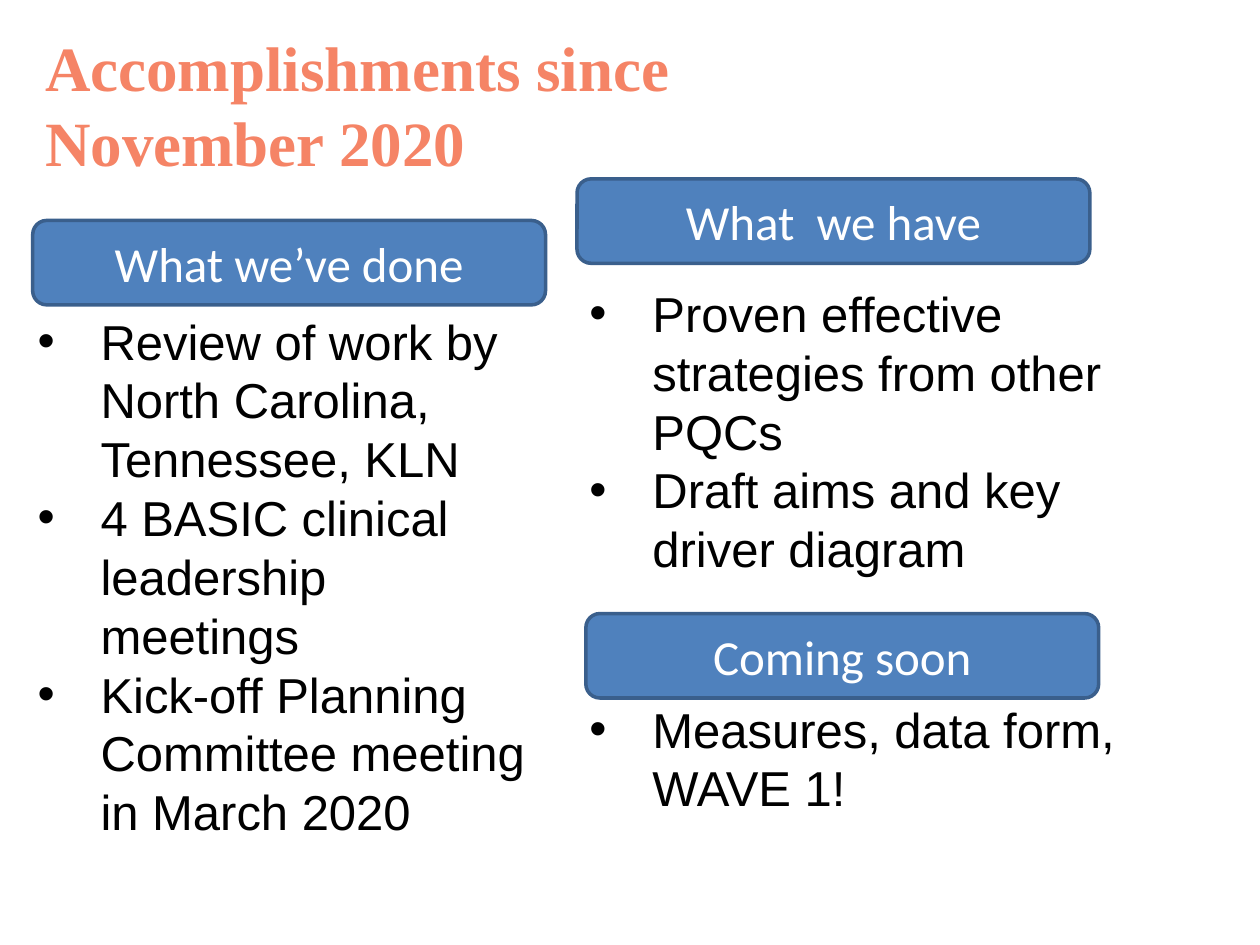
from lxml.etree import SubElement
from pptx import Presentation
from pptx.dml.color import RGBColor
from pptx.enum.shapes import MSO_SHAPE
from pptx.enum.text import MSO_ANCHOR, PP_ALIGN
from pptx.oxml.ns import qn
from pptx.util import Inches, Pt


def color(code):
    """Turn a hex string into a colour."""
    return RGBColor.from_string(code)


def write(para, text, font="Arial", size=28, fill="000000", bold=False, align=PP_ALIGN.LEFT):
    """Put formatted text into a paragraph."""
    para.text = text
    para.alignment = align
    for run in para.runs:
        run.font.name = font
        run.font.size = Pt(size)
        run.font.bold = bold
        run.font.color.rgb = color(fill)


def bullet(para):
    """Give a paragraph a hanging bullet."""
    props = para._p.get_or_add_pPr()
    props.set("marL", str(Inches(0.5)))
    props.set("indent", str(-Inches(0.5)))
    SubElement(props, qn("a:buFont"), typeface="Arial")
    SubElement(props, qn("a:buChar"), char="•")


def add_box(slide, left, top, width, height):
    """Add a wrapping text box and return its frame."""
    box = slide.shapes.add_textbox(Inches(left), Inches(top), Inches(width), Inches(height))
    box.text_frame.word_wrap = True
    return box.text_frame


def add_title(slide, text):
    """Add the slide title."""
    frame = add_box(slide, 0.26, 0.2, 9, 1.25)
    frame.vertical_anchor = MSO_ANCHOR.MIDDLE
    write(frame.paragraphs[0], text, font="Times New Roman", size=36, fill="F58466", bold=True)


def add_list(slide, left, top, width, height, items):
    """Add a bulleted list."""
    frame = add_box(slide, left, top, width, height)
    for index, item in enumerate(items):
        para = frame.add_paragraph() if index else frame.paragraphs[0]
        bullet(para)
        write(para, item)


def add_header(slide, left, top, text):
    """Add a rounded section header."""
    shape = slide.shapes.add_shape(
        MSO_SHAPE.ROUNDED_RECTANGLE, Inches(left), Inches(top), Inches(4.07), Inches(0.67)
    )
    shape.shadow.inherit = False
    shape.fill.solid()
    shape.fill.fore_color.rgb = color("4F81BD")
    shape.line.color.rgb = color("3A5F8C")
    shape.line.width = Pt(2)
    frame = shape.text_frame
    frame.word_wrap = True
    frame.vertical_anchor = MSO_ANCHOR.MIDDLE
    write(frame.paragraphs[0], text, font="Calibri", fill="FFFFFF", align=PP_ALIGN.CENTER)


def main():
    """Build and save the slide."""
    deck = Presentation()
    deck.slide_width, deck.slide_height = Inches(10), Inches(7.5)
    slide = deck.slides.add_slide(deck.slide_layouts[6])
    add_title(slide, "Accomplishments since \vNovember 2020")
    add_list(slide, 0.2, 2.42, 4.13, 4.81, [
        "Review of work by North Carolina, Tennessee, KLN",
        "4 BASIC clinical leadership meetings",
        "Kick-off Planning Committee meeting in March 2020",
    ])
    add_list(slide, 4.58, 2.2, 4.92, 2.46, [
        "Proven effective strategies from other PQCs",
        "Draft aims and key driver diagram",
    ])
    add_header(slide, 0.26, 1.75, "What we’ve done")
    add_header(slide, 4.58, 1.42, "What  we have")
    add_header(slide, 4.65, 4.87, "Coming soon")
    add_list(slide, 4.58, 5.5, 4.44, 1.04, ["Measures, data form, WAVE 1!"])
    deck.save("out.pptx")


if __name__ == "__main__":
    main()
